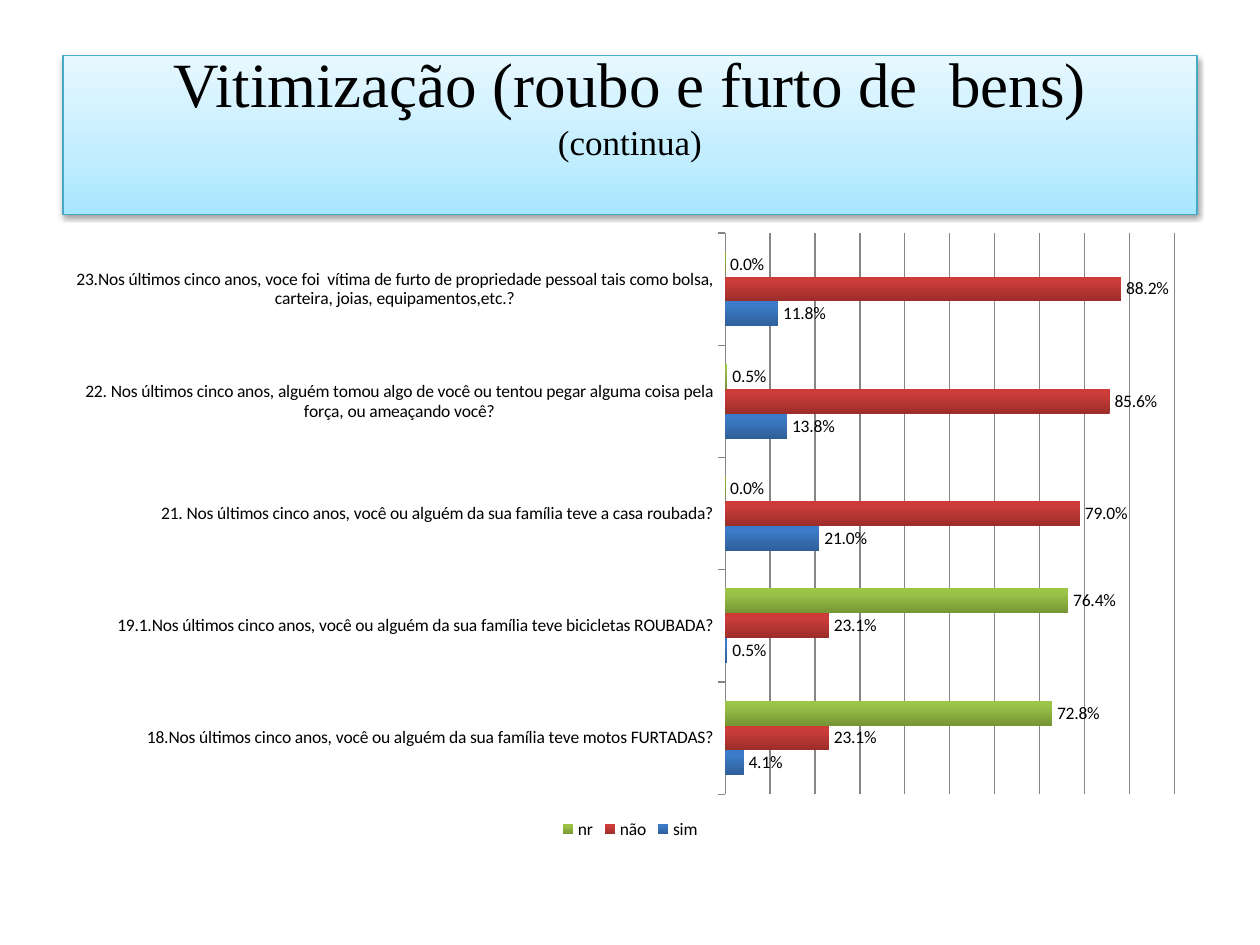
from copy import deepcopy

from lxml import etree
from pptx import Presentation
from pptx.chart.data import CategoryChartData
from pptx.dml.color import RGBColor as RGB
from pptx.enum.chart import XL_CHART_TYPE as CT, XL_LABEL_POSITION as LP
from pptx.enum.chart import XL_LEGEND_POSITION as LEG, XL_TICK_LABEL_POSITION as TLP, XL_TICK_MARK as TM
from pptx.enum.text import MSO_ANCHOR, MSO_AUTO_SIZE, PP_ALIGN
from pptx.oxml import parse_xml
from pptx.oxml.ns import nsdecls, qn
from pptx.util import Inches, Pt

TITLE = [("Vitimização (roubo e furto de  bens)", 36), ("(continua)", 20)]
CATEGORIES = [
    "18.Nos últimos cinco anos, você ou alguém da sua família teve motos FURTADAS?",
    "19.1.Nos últimos cinco anos, você ou alguém da sua família teve bicicletas ROUBADA?",
    "21. Nos últimos cinco anos, você ou alguém da sua família teve a casa roubada?",
    "22. Nos últimos cinco anos, alguém tomou algo de você ou tentou pegar alguma coisa pela força, ou ameaçando você?",
    "23.Nos últimos cinco anos, voce foi  vítima de furto de propriedade pessoal tais como bolsa, carteira, joias, equipamentos,etc.?",
]
SERIES = {
    "sim": [0.041, 0.005, 0.21, 0.138, 0.118],
    "não": [0.231, 0.231, 0.79, 0.856, 0.882],
    "nr": [0.728, 0.764, 0, 0.005, 0],
}
THEME = {
    "title_font": "Times New Roman",
    "chart_font": "Calibri",
    "chart_size": 10,
    "text": "000000",
    "title_line": "46AAC5",
    "grid": "868686",
    "title_fill": [(0, "A7E6FF"), (0.35, "C1EDFF"), (1, "E7F8FF")],
    "sim": [(0, "2E5F99"), (0.8, "3C7BC7"), (1, "3A7CCB")],
    "não": [(0, "9B2D2A"), (0.8, "CB3D3A"), (1, "CE3B37")],
    "nr": [(0, "769535"), (0.8, "9BC348"), (1, "9CC746")],
}
PERCENT = "0.0%"
PLOT = {"x": 0.584, "y": 0.02, "w": 0.396, "h": 0.9}


def color(name):
    return RGB.from_string(THEME[name])


def set_gradient(fill, element, stops):
    fill.gradient()
    fill.gradient_angle = 90
    gs_list = next(element.iter(qn("a:gsLst")))
    while len(gs_list) < len(stops):
        gs_list.append(deepcopy(gs_list[0]))
    for stop, (position, rgb) in zip(fill.gradient_stops, stops):
        stop.position = position
        stop.color.rgb = RGB.from_string(rgb)


def style_font(font, face, size):
    font.name = THEME[face]
    font.size = Pt(size)
    font.color.rgb = color("text")


def add_title(slide):
    sp = slide.shapes.title
    sp.left, sp.top, sp.width, sp.height = map(Inches, (0.5, 0.44, 9, 1.26))
    set_gradient(sp.fill, sp._element.spPr, THEME["title_fill"])
    sp.line.color.rgb = color("title_line")
    sp.line.width = Pt(0.75)
    sp._element.spPr.append(parse_xml(
        f'<a:effectLst {nsdecls("a")}><a:outerShdw blurRad="{Pt(3.1)}" dist="{Pt(1.6)}" '
        'dir="5400000" rotWithShape="0"><a:srgbClr val="000000"><a:alpha val="38000"/>'
        '</a:srgbClr></a:outerShdw></a:effectLst>'))
    tf = sp.text_frame
    tf.auto_size = MSO_AUTO_SIZE.NONE
    tf.word_wrap = True
    tf.vertical_anchor = MSO_ANCHOR.MIDDLE
    tf.margin_top, tf.margin_bottom = 0, Inches(0.5)
    for i, (text, size) in enumerate(TITLE):
        p = tf.add_paragraph() if i else tf.paragraphs[0]
        p.text = text
        p.alignment = PP_ALIGN.CENTER
        style_font(p.font, "title_font", size)


def set_plot_layout(chart):
    area = next(chart._chartSpace.iter(qn("c:plotArea")))
    for old in area.findall(qn("c:layout")):
        area.remove(old)
    layout = etree.Element(qn("c:layout"))
    manual = etree.SubElement(layout, qn("c:manualLayout"))
    values = {"layoutTarget": "inner", "xMode": "edge", "yMode": "edge", **PLOT}
    for tag, value in values.items():
        etree.SubElement(manual, qn(f"c:{tag}")).set("val", str(value))
    area.insert(0, layout)


def add_chart(slide):
    data = CategoryChartData(number_format=PERCENT)
    data.categories = CATEGORIES
    for name, values in SERIES.items():
        data.add_series(name, values)
    box = map(Inches, (0.5, 1.75, 9, 4.95))
    chart = slide.shapes.add_chart(CT.BAR_CLUSTERED, *box, data).chart
    style_font(chart.font, "chart_font", THEME["chart_size"])
    chart.has_title = False
    chart.has_legend = True
    chart.legend.position = LEG.BOTTOM
    chart.legend.include_in_layout = False

    cat, val = chart.category_axis, chart.value_axis
    cat.major_tick_mark = TM.OUTSIDE
    cat.tick_label_position = TLP.LOW
    cat.has_major_gridlines = False
    val.visible = False
    val.minimum_scale, val.maximum_scale, val.major_unit = 0, 1, 0.1
    val.has_major_gridlines = True
    for line in (cat.format.line, val.major_gridlines.format.line):
        line.color.rgb = color("grid")
        line.width = Pt(0.75)

    plot = chart.plots[0]
    plot.gap_width = 150
    plot.vary_by_categories = False
    for series in plot.series:
        set_gradient(series.format.fill, series._element, THEME[series.name])
        labels = series.data_labels
        labels.show_value = True
        labels.position = LP.OUTSIDE_END
        labels.number_format = PERCENT
        labels.number_format_is_linked = False
    set_plot_layout(chart)


def main():
    prs = Presentation()
    prs.slide_width, prs.slide_height = Inches(10), Inches(7.5)
    slide = prs.slides.add_slide(prs.slide_layouts[5])
    add_title(slide)
    add_chart(slide)
    prs.save("out.pptx")


if __name__ == "__main__":
    main()
